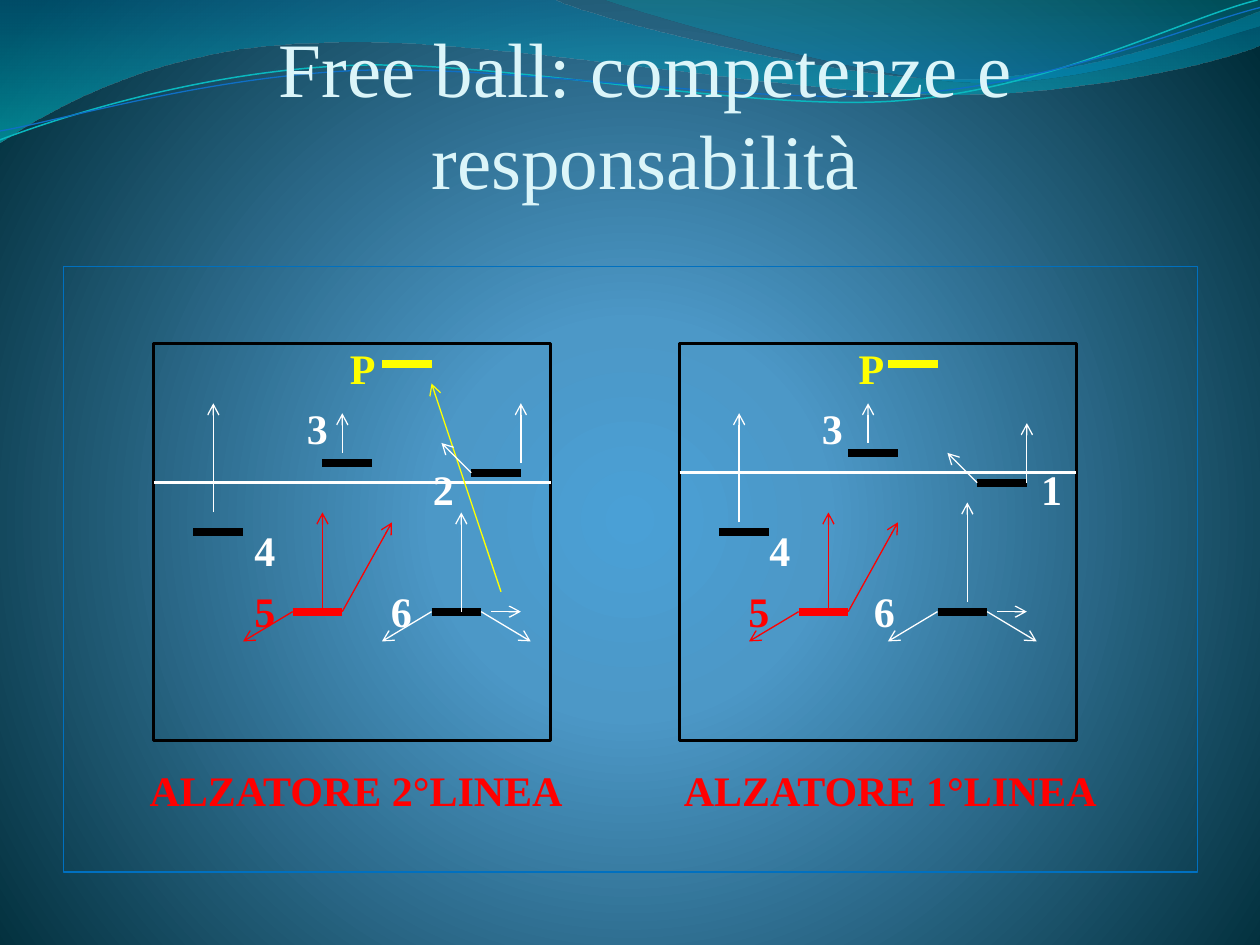
from lxml import etree
from pptx import Presentation
from pptx.dml.color import RGBColor
from pptx.enum.shapes import MSO_CONNECTOR, MSO_SHAPE
from pptx.enum.text import MSO_ANCHOR, PP_ALIGN
from pptx.oxml import parse_xml
from pptx.oxml.ns import nsdecls, qn
from pptx.util import Cm, Pt

LINE, RECT = MSO_CONNECTOR.STRAIGHT, MSO_SHAPE.RECTANGLE
TOP_SIDE, BOTTOM = MSO_ANCHOR.TOP, MSO_ANCHOR.BOTTOM
LEFT, CENTER = PP_ALIGN.LEFT, PP_ALIGN.CENTER
FONT = "Times New Roman"
WHITE = RGBColor(0xFF, 0xFF, 0xFF)
BLACK = RGBColor(0, 0, 0)
RED = RGBColor(0xFF, 0, 0)
YELLOW = RGBColor(0xFF, 0xFF, 0)
BLUE = RGBColor(0, 0x70, 0xC0)
PALE = RGBColor(0xDB, 0xF5, 0xF9)
TEAL = RGBColor(0x0A, 0xB8, 0xBF)
AZURE = RGBColor(0x0F, 0x6F, 0xC6)

TITLE = "Free ball: competenze e responsabilità"
GLOW = [(0, "4AA0D6"), (25, "4C98C7"), (100, "002C38")]

# Waves in inches: a pair is a straight step, six numbers are a Bézier step
BANDS = [
    ([(0, 0), (4.4, 0), (4.76, 0.17, 6.64, 0.63, 7.58, 0.63),
      (8.53, 0.63, 9.58, 0.26, 10, 0.09), (10, 0.36),
      (9.83, 0.44, 8.7, 0.76, 7.46, 0.75), (6.22, 0.75, 3.82, 0.28, 2.57, 0.34),
      (1.29, 0.36, 0.46, 0.83, 0, 1.13)],
     [("0074A1", 45), ("00C6CF", 55)], (0, 1)),
    ([(4.79, 0), (5.09, 0.11, 6.82, 0.62, 7.69, 0.65),
      (8.56, 0.69, 9.61, 0.32, 10, 0.21), (10, 0)],
     [("00A1A9", 30), ("008BBF", 45)], (0, 0.8)),
]
WAVES = [
    ([(0, 1.11), (0.48, 0.93, 1.58, 0.57, 2.77, 0.52),
      (3.95, 0.47, 5.93, 0.89, 7.13, 0.8), (8.33, 0.71, 9.38, 0.15, 9.98, 0)],
     TEAL, 0.85),
    ([(0, 1.04), (0.47, 0.96, 1.64, 0.61, 2.83, 0.56),
      (4.03, 0.51, 5.97, 0.84, 7.17, 0.75), (8.36, 0.67, 9.41, 0.21, 10, 0.06)],
     AZURE, 0.75),
]

# Lines of text: words, centre in cm from the left of the frame, colour
ROWS = [
    [("P", 6.03, YELLOW), ("P", 16.29, YELLOW)],
    [("3", 5.12, WHITE), ("3", 15.5, WHITE)],
    [("2", 7.66, WHITE), ("1", 19.92, WHITE)],
    [("4", 4.06, WHITE), ("4", 14.44, WHITE)],
    [("5", 4.06, RED), ("6", 6.81, WHITE), ("5", 14.02, RED), ("6", 16.55, WHITE)],
    [("ALZATORE 2°LINEA", 5.9, RED), ("ALZATORE 1°LINEA", 16.67, RED)],
]
GAPS = [0, 5.9, 5.9, 5.9, 5.9, 73.7]

# Arrows (x1, y1, x2, y2) in cm from the left end of a player's bar
THREE = [(0.4, -0.2, 0.4, -1)]
FIVE = [(0, 0, -1, 0.6), (0.6, 0, 0.6, -2), (1, 0, 2, -1.8)]
SIX = [(0, 0, -1, 0.6), (1.2, 0, 1.8, 0), (1, 0, 2, 0.6)]
SIDE = (0, 0, -0.6, -0.6)

# Courts: left, attack line, players (bar x, bar y, bar colour, arrow colour, arrows)
COURTS = [
    (3.1, 2.8, [
        (4.6, 0.4, YELLOW, YELLOW, [(2.4, 4.6, 1, 0.4)]),
        (3.4, 2.4, BLACK, WHITE, THREE),
        (6.4, 2.6, BLACK, WHITE, [(1, -0.2, 1, -1.4), SIDE]),
        (0.8, 3.8, BLACK, WHITE, [(0.4, -0.4, 0.4, -2.6)]),
        (2.8, 5.4, RED, RED, FIVE),
        (5.6, 5.4, BLACK, WHITE, SIX + [(0.6, 0, 0.6, -2)])]),
    (13.7, 2.6, [
        (4.2, 0.4, YELLOW, YELLOW, []),
        (3.4, 2.2, BLACK, WHITE, THREE),
        (6, 2.8, BLACK, WHITE, [(1, 0, 1, -1.2), SIDE]),
        (0.8, 3.8, BLACK, WHITE, [(0.4, -0.2, 0.4, -2.4)]),
        (2.4, 5.4, RED, RED, FIVE),
        (5.2, 5.4, BLACK, WHITE, SIX + [(0.6, -0.2, 0.6, -2.2)])]),
]
TOP, SIZE, BAR = 6.93, 8, 1

prs = Presentation()
prs.slide_width, prs.slide_height = Cm(25.4), Cm(19.05)
slide = prs.slides.add_slide(prs.slide_layouts[6])
shapes = slide.shapes


def add_wave(steps, close):
    """Draw all points as line steps, then join threes into Bézier steps."""
    pts = [(Cm(step[i] * 2.54), Cm(step[i + 1] * 2.54))
           for step in steps for i in range(0, len(step), 2)]
    pen = shapes.build_freeform(*pts[0])
    pen.add_line_segments(pts[1:], close=close)
    wave = pen.convert_to_shape()
    wave.shadow.inherit = False
    legs = iter(list(wave._element.spPr.iter(qn("a:lnTo"))))
    for step in steps[1:]:
        leg = next(legs)
        if len(step) == 6:
            curve = etree.Element(qn("a:cubicBezTo"))
            leg.addprevious(curve)
            for part in (leg, next(legs), next(legs)):
                curve.append(part[0])
                part.getparent().remove(part)
    return wave


def add_box(x, y, w, h, color, width):
    box = shapes.add_shape(RECT, Cm(x), Cm(y), Cm(w), Cm(h))
    box.shadow.inherit = False
    box.fill.background()
    box.line.color.rgb, box.line.width = color, Pt(width)
    return box


def add_line(x1, y1, x2, y2, color, width, arrow=False):
    line = shapes.add_connector(LINE, Cm(x1), Cm(y1), Cm(x2), Cm(y2))
    line.line.color.rgb, line.line.width = color, Pt(width)
    props = line._element.spPr
    if arrow:
        etree.SubElement(props.find(qn("a:ln")), qn("a:tailEnd"), type="arrow")
    etree.SubElement(props, qn("a:effectLst"))


def set_frame(frame, anchor, top=0):
    frame.word_wrap = True
    frame.vertical_anchor = anchor
    frame.margin_left = frame.margin_right = frame.margin_bottom = 0
    frame.margin_top = Cm(top)


def set_font(font, size, bold):
    font.name, font.size, font.bold = FONT, Pt(size), bold


# Background glow
slide.background.fill.solid()
back = slide._element.cSld.find(qn("p:bg")).find(qn("p:bgPr"))
stops = "".join(f'<a:gs pos="{pos * 1000}"><a:srgbClr val="{color}"/></a:gs>'
                for pos, color in GLOW)
back.replace(back[0], parse_xml(
    f'<a:gradFill {nsdecls("a")} rotWithShape="1"><a:gsLst>{stops}</a:gsLst>'
    '<a:path path="circle"><a:fillToRect l="10000" t="110000" r="10000" '
    'b="100000"/></a:path></a:gradFill>'))

# Waves along the top
for steps, colors, places in BANDS:
    band = add_wave(steps, True)
    band.line.fill.background()
    band.fill.gradient()
    band.fill.gradient_angle = 270
    for stop, (color, alpha), pos in zip(band.fill.gradient_stops, colors, places):
        stop.color.rgb = RGBColor.from_string(color)
        stop.position = pos
    tints = band._element.spPr.iter(qn("a:srgbClr"))
    for tint, (color, alpha) in zip(tints, colors):
        etree.SubElement(tint, qn("a:alpha"), val=str(alpha * 1000))
for steps, color, width in WAVES:
    wave = add_wave(steps, False)
    wave.fill.background()
    wave.line.color.rgb, wave.line.width = color, Pt(width)

# Title
title = shapes.add_textbox(Cm(1.9), Cm(1.98), Cm(22.23), Cm(2.16)).text_frame
set_frame(title, BOTTOM)
head = title.paragraphs[0]
head.text, head.alignment = TITLE, CENTER
set_font(head.font, 44, False)
head.font.color.rgb = PALE

# Frame with names and captions, each centred on a tab stop
body = add_box(1.28, 5.38, 22.86, 12.2, BLUE, 0.75).text_frame
set_frame(body, TOP_SIDE, 1.52)
for i, (row, gap) in enumerate(zip(ROWS, GAPS)):
    par = body.add_paragraph() if i else body.paragraphs[0]
    par.alignment, par.space_before = LEFT, Pt(gap)
    set_font(par.font, 24, True)
    tabs = etree.Element(qn("a:tabLst"))
    for text, spot, color in row:
        etree.SubElement(tabs, qn("a:tab"), pos=str(Cm(spot)), algn="ctr")
        run = par.add_run()
        run.text = "\t" + text
        run.font.color.rgb = color
    par._p.pPr.find(qn("a:defRPr")).addprevious(tabs)

# Courts with players
for left, attack, players in COURTS:
    add_box(left, TOP, SIZE, SIZE, BLACK, 2)
    add_line(left, TOP + attack, left + SIZE, TOP + attack, WHITE, 1.5)
    for dx, dy, color, ink, arrows in players:
        x, y = left + dx, TOP + dy
        add_line(x, y, x + BAR, y, color, 4.5)
        for x1, y1, x2, y2 in arrows:
            add_line(x + x1, y + y1, x + x2, y + y2, ink, 0.75, True)

prs.save("out.pptx")
